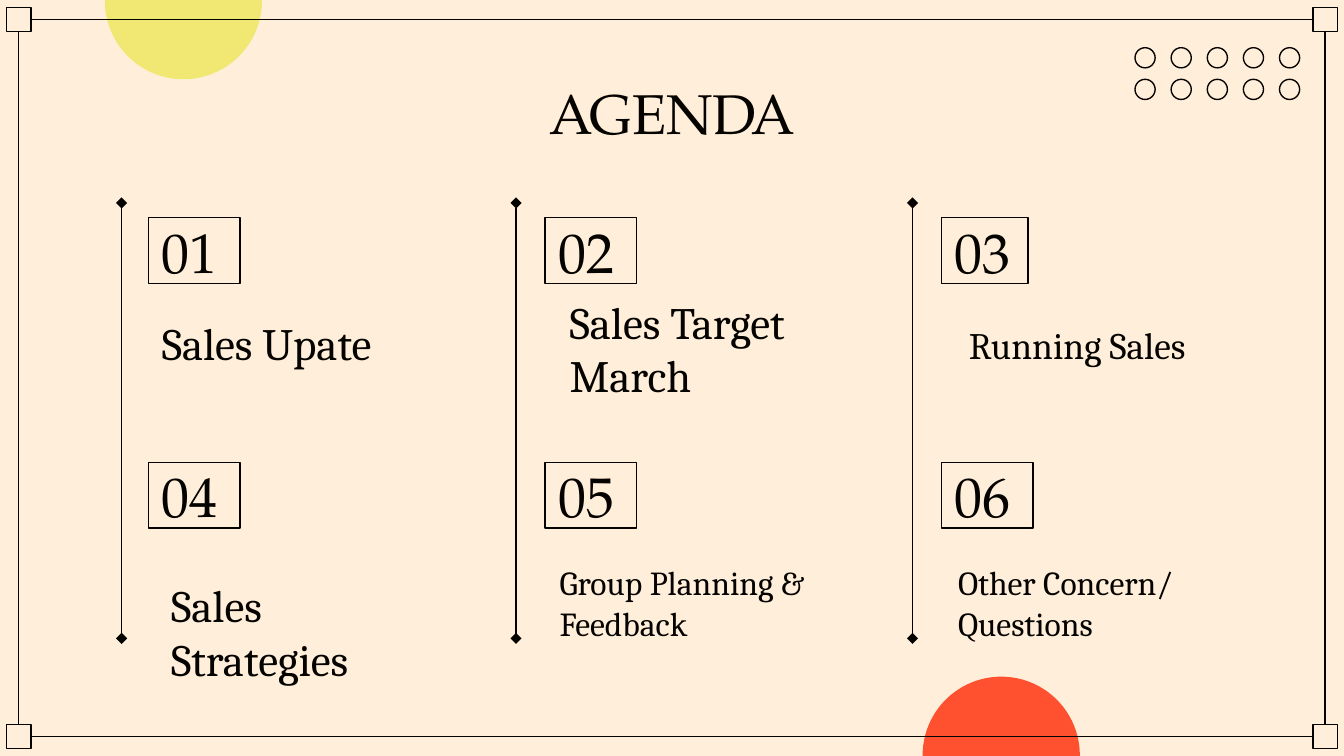
"""Build an agenda slide with six numbered topics in three columns."""
from lxml.etree import SubElement
from pptx import Presentation
from pptx.dml.color import RGBColor
from pptx.enum.shapes import MSO_CONNECTOR as Connector, MSO_SHAPE as Shape
from pptx.enum.text import MSO_ANCHOR as Anchor, MSO_AUTO_SIZE as AutoSize, PP_ALIGN as Align
from pptx.oxml.ns import qn
from pptx.util import Pt

PX = 4572
WIDTH, HEIGHT = 2000, 1125
INK, CREAM, YELLOW, RED = "050300", "FFEFDA", "F0E872", "FF502F"
HEADING_FONT, BODY_FONT = "TeX Gyre Pagella", "Cambria"

TITLE = "AGENDA"
TOPICS = [
    ("01", 136, "Sales Upate", 24, (221, 484)),
    ("02", 136, "Sales Target\nMarch", 24, (828, 532)),
    ("03", 129, "Running Sales", 20, (1422, 480)),
    ("04", 136, "Sales Strategies", 24, (235, 954)),
    ("05", 136, "Group Planning & Feedback", 18, (813, 891)),
    ("06", 136, "Other Concern/ Questions", 18, (1406, 891)),
]
NUMBER_LEFTS, NUMBER_TOPS, NUMBER_HEIGHT = (221, 811, 1401), (324, 688), 98
LABEL_WIDTH, LABEL_HEIGHT = 418, 86
RULE_XS, RULE_TOP, RULE_BOTTOM = (181, 768, 1358), 302, 950
DISC_SIZE = 234
DISCS = [(156, -116, YELLOW), (1373, 1007, RED)]
FRAME_LEFT, FRAME_TOP, FRAME_RIGHT, FRAME_BOTTOM = 28, 29, 1972, 1096
CORNER = 36
DOT_LEFT, DOT_TOP, DOT_SIZE, DOT_STEP_X, DOT_STEP_Y = 1689, 71, 30, 53.75, 47
INSET = 20


def px(*lengths):
    return [round(length * PX) for length in lengths]


def color(value):
    return RGBColor.from_string(value)


def outline(item):
    item.line.color.rgb = color(INK)
    item.line.width = Pt(0.75)


def add_shape(slide, kind, left, top, width, height, fill=None):
    shape = slide.shapes.add_shape(kind, *px(left, top, width, height))
    shape.shadow.inherit = False
    if fill:
        shape.fill.solid()
        shape.fill.fore_color.rgb = color(fill)
        shape.line.fill.background()
    else:
        shape.fill.background()
        outline(shape)
    return shape


def add_line(slide, x1, y1, x2, y2, ends=None):
    line = slide.shapes.add_connector(Connector.STRAIGHT, *px(x1, y1, x2, y2))
    outline(line)
    properties = line._element.spPr
    if ends:
        for tag in ("a:headEnd", "a:tailEnd"):
            SubElement(properties.find(qn("a:ln")), qn(tag), type=ends)
    SubElement(properties, qn("a:effectLst"))


def write(shape, text, size, font, anchor, align=Align.LEFT):
    frame = shape.text_frame
    frame.text = text
    frame.word_wrap = True
    frame.auto_size = AutoSize.NONE
    frame.vertical_anchor = anchor
    inset, = px(INSET)
    frame.margin_left = frame.margin_right = inset
    frame.margin_top = frame.margin_bottom = inset
    for para in frame.paragraphs:
        para.alignment = align
        for span in para.runs:
            span.font.size = Pt(size)
            span.font.name = font
            span.font.color.rgb = color(INK)


def add_frame(slide):
    half = CORNER / 2
    for y in (FRAME_TOP, FRAME_BOTTOM):
        for x in (FRAME_LEFT, FRAME_RIGHT):
            add_shape(slide, Shape.RECTANGLE, x - half, y - half, CORNER, CORNER)
        add_line(slide, FRAME_LEFT + half, y, FRAME_RIGHT - half, y)
    for x in (FRAME_LEFT, FRAME_RIGHT):
        add_line(slide, x, FRAME_TOP + half, x, FRAME_BOTTOM - half)


def add_topics(slide):
    for index, (number, width, topic, size, place) in enumerate(TOPICS):
        row, column = divmod(index, len(NUMBER_LEFTS))
        box = add_shape(slide, Shape.RECTANGLE, NUMBER_LEFTS[column], NUMBER_TOPS[row],
                        width, NUMBER_HEIGHT)
        write(box, number, 30, HEADING_FONT, Anchor.MIDDLE)
        label = slide.shapes.add_textbox(*px(*place, LABEL_WIDTH, LABEL_HEIGHT))
        write(label, topic, size, BODY_FONT, Anchor.BOTTOM)


def main():
    deck = Presentation()
    deck.slide_width, deck.slide_height = px(WIDTH, HEIGHT)
    slide = deck.slides.add_slide(deck.slide_layouts[5])
    slide.background.fill.solid()
    slide.background.fill.fore_color.rgb = color(CREAM)

    title = slide.shapes.title
    title.left, title.top, title.width, title.height = px(158, 97, 1686, 126)
    write(title, TITLE, 30, HEADING_FONT, Anchor.TOP, Align.CENTER)

    for left, top, fill in DISCS:
        add_shape(slide, Shape.OVAL, left, top, DISC_SIZE, DISC_SIZE, fill)
    add_frame(slide)
    add_topics(slide)
    for row in range(2):
        for column in range(5):
            add_shape(slide, Shape.OVAL, DOT_LEFT + column * DOT_STEP_X,
                      DOT_TOP + row * DOT_STEP_Y, DOT_SIZE, DOT_SIZE)
    for x in RULE_XS:
        add_line(slide, x, RULE_TOP, x, RULE_BOTTOM, "diamond")
    deck.save("out.pptx")


if __name__ == "__main__":
    main()
